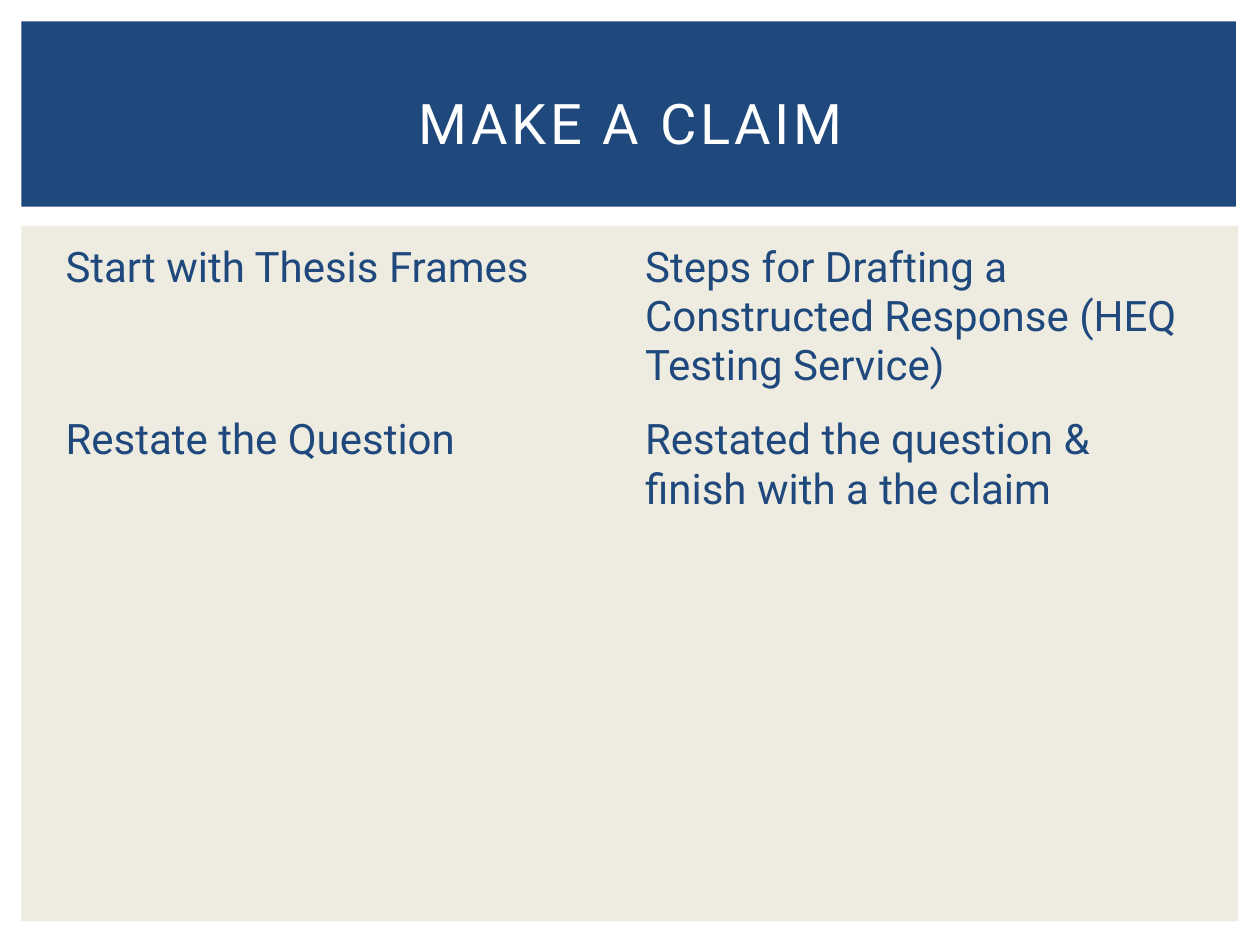
from pptx import Presentation
from pptx.dml.color import RGBColor
from pptx.enum.shapes import MSO_SHAPE
from pptx.enum.text import MSO_ANCHOR, PP_ALIGN
from pptx.util import Inches, Pt

RECTANGLE = MSO_SHAPE.RECTANGLE
MIDDLE = MSO_ANCHOR.MIDDLE
CENTER = PP_ALIGN.CENTER

NAVY = RGBColor(0x1F, 0x49, 0x7D)
CREAM = RGBColor(0xEE, 0xEC, 0xE1)
WHITE = RGBColor(0xFF, 0xFF, 0xFF)

FONT = "Roboto"
NO_GRID_STYLE = "{2D5ABB26-0587-4C30-8999-92F81FD0307C}"

CLAIM_ROWS = [
    ("Start with Thesis Frames",
     "Steps for Drafting a Constructed Response (HEQ Testing Service)"),
    ("Restate the Question",
     "Restated the question & finish with a the claim"),
]


def add_panel(slide, left, top, width, height, color):
    panel = slide.shapes.add_shape(
        RECTANGLE, Inches(left), Inches(top), Inches(width), Inches(height))
    panel.shadow.inherit = False
    panel.fill.solid()
    panel.fill.fore_color.rgb = color
    panel.line.fill.background()


def format_runs(paragraph, size, color):
    for run in paragraph.runs:
        run.font.name = FONT
        run.font.size = Pt(size)
        run.font.bold = False
        run.font.color.rgb = color


def add_title(slide, wording):
    title = slide.shapes.add_textbox(
        Inches(0.42), Inches(0.39), Inches(9.17), Inches(1.15))
    frame = title.text_frame
    frame.word_wrap = True
    frame.vertical_anchor = MIDDLE
    frame.text = wording
    heading = frame.paragraphs[0]
    heading.alignment = CENTER
    format_runs(heading, 32, WHITE)
    # Letter spacing in hundredths of a point
    for run in heading.runs:
        run.font._element.set("spc", "200")


def add_claim_table(slide, rows):
    row_height = Inches(1.37)
    claim_table = slide.shapes.add_table(
        len(rows), len(rows[0]), Inches(0.42), Inches(1.88),
        Inches(9.2), row_height * len(rows)).table
    # Plain style without borders or banding
    claim_table.first_row = False
    claim_table.horz_banding = False
    claim_table._tbl.tblPr[0].text = NO_GRID_STYLE
    for row_index, row in enumerate(rows):
        for column_index, wording in enumerate(row):
            cell = claim_table.cell(row_index, column_index)
            cell.fill.background()
            cell.text_frame.text = wording
            format_runs(cell.text_frame.paragraphs[0], 24, NAVY)


def main():
    deck = Presentation()
    deck.slide_width = Inches(10)
    deck.slide_height = Inches(7.5)
    slide = deck.slides.add_slide(deck.slide_layouts[6])

    # Body and title bands
    add_panel(slide, 0.17, 1.79, 9.66, 5.52, CREAM)
    add_panel(slide, 0.17, 0.17, 9.64, 1.47, NAVY)

    # Content
    add_claim_table(slide, CLAIM_ROWS)
    add_title(slide, "MAKE A CLAIM")

    deck.save("out.pptx")


if __name__ == "__main__":
    main()
